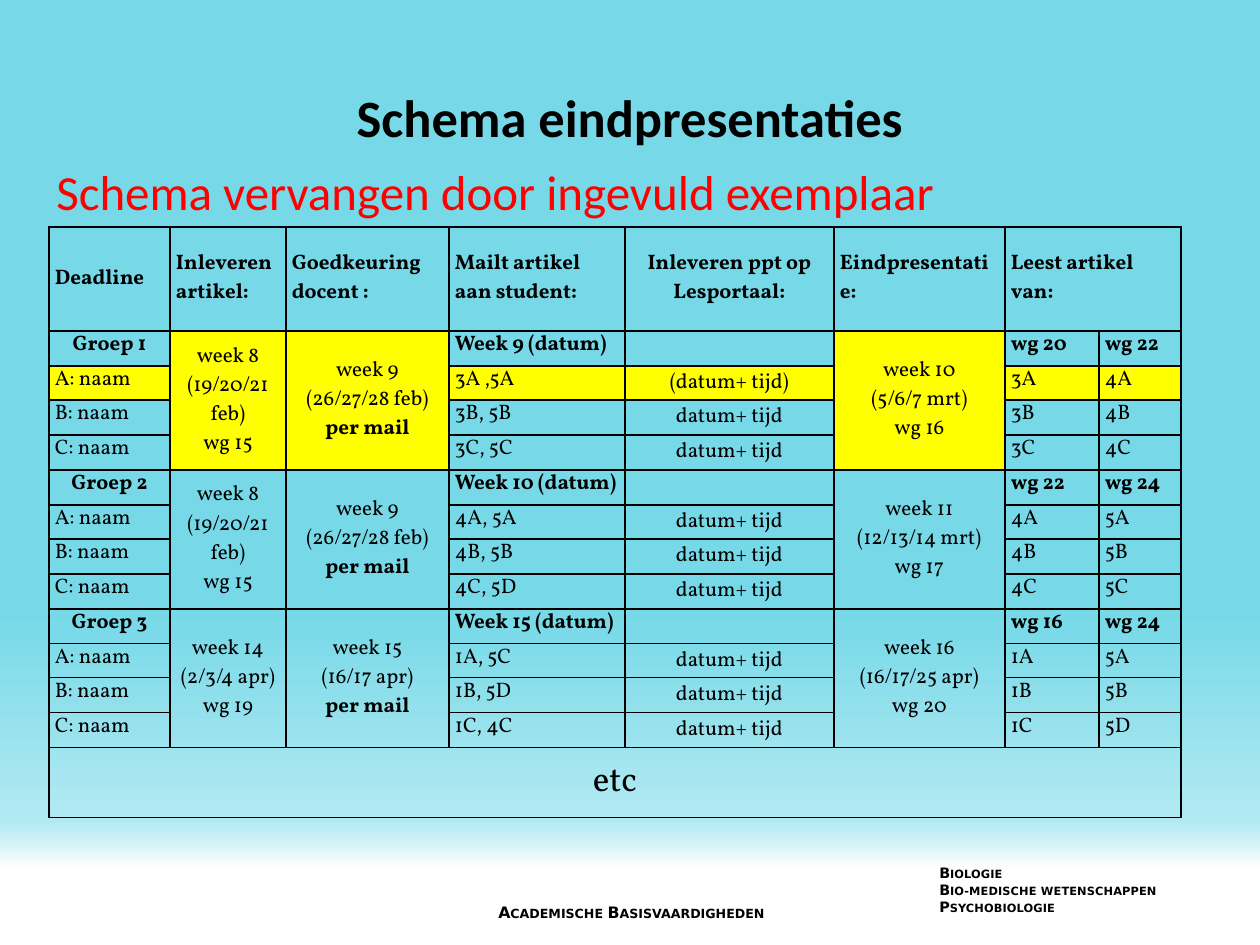
from copy import deepcopy
from dataclasses import dataclass

from lxml import etree
from pptx import Presentation
from pptx import util as u
from pptx.dml.color import RGBColor
from pptx.enum import text
from pptx.oxml.ns import qn


@dataclass(frozen=True)
class Theme:
    ink: str = "000000"
    red: str = "FF0000"
    mark: str = "FFFF00"
    sky: tuple = ((0.65, "77D9E8"), (0.87, "B3EAF2"), (0.92, "FFFFFF"))
    head: str = "Calibri"
    body: str = "Vollkorn"
    foot: str = "DejaVu Sans"
    title: float = 30
    note: float = 28
    cell: float = 12
    etc: float = 20
    course: float = 9
    studies: float = 8.2


T = Theme()
PX = 914400 / 126
LEFT, CENTER = text.PP_ALIGN.LEFT, text.PP_ALIGN.CENTER


def px(*lengths):
    return [u.Emu(round(n * PX)) for n in lengths]


def write(tf, lines, name, size, color=T.ink, bold=False, align=LEFT, caps=False):
    tf.word_wrap = True
    for i, line in enumerate(lines):
        p = tf.paragraphs[0] if i == 0 else tf.add_paragraph()
        p.alignment = align
        p.font.name = name
        p.font.size = u.Pt(size)
        p.font.bold = bold or line == "per mail"
        p.font.color.rgb = RGBColor.from_string(color)
        if line:
            r = p.add_run()
            r.text = line
            if caps:
                r.font.bold = bold
                r._r.rPr.set("cap", "small")
        else:
            etree.SubElement(p._p, qn("a:endParaRPr"), sz=str(size * 100))


prs = Presentation()
prs.slide_width, prs.slide_height = px(1260, 945)
s = prs.slides.add_slide(prs.slide_layouts[5])

fill = s.background.fill
fill.gradient()
fill.gradient_angle = 270
stops = s.element.xpath(".//a:gsLst")[0]
stops.append(deepcopy(stops[-1]))
for stop, (position, color) in zip(fill.gradient_stops, T.sky):
    stop.position = position
    stop.color.rgb = RGBColor.from_string(color)

title = s.shapes.title
title.left, title.top, title.width, title.height = px(63, 38, 1134, 157)
title.text_frame.vertical_anchor = text.MSO_ANCHOR.MIDDLE
write(title.text_frame, ["Schema eindpresentaties"], T.head, T.title, bold=True, align=CENTER)

course = s.shapes.add_textbox(*px(425, 897, 413, 32))
write(course.text_frame, ["Academische Basisvaardigheden"], T.foot, T.course,
      bold=True, align=CENTER, caps=True)
studies = s.shapes.add_textbox(*px(927, 858, 328, 66))
write(studies.text_frame, ["Biologie", "Bio-medische wetenschappen", "Psychobiologie"],
      T.foot, T.studies, bold=True, caps=True)

header = ["Deadline", "Inleveren\nartikel:", "Goedkeuring\ndocent :", "Mailt artikel aan student:",
          "Inleveren ppt op Lesportaal:", "Eindpresentatie:", "Leest artikel van:", ""]
groups = [
    (["week 8", "(19/20/21 feb)", "wg 15"], ["week 9", "(26/27/28 feb)", "per mail"],
     ["week 10", "(5/6/7 mrt)", "wg 16"],
     [("Week 9 (datum)", "wg 20", "wg 22"), ("3A ,5A", "3A", "4A"),
      ("3B, 5B", "3B", "4B"), ("3C, 5C", "3C", "4C")]),
    (["week 8", "(19/20/21 feb)", "wg 15"], ["week 9", "(26/27/28 feb)", "per mail"],
     ["week 11", "(12/13/14 mrt)", "wg 17"],
     [("Week 10 (datum)", "wg 22", "wg 24"), ("4A, 5A", "4A", "5A"),
      ("4B, 5B", "4B", "5B"), ("4C, 5D", "4C", "5C")]),
    (["week 14", "(2/3/4 apr)", "wg 19"], ["week 15", "(16/17 apr)", "per mail"],
     ["week 16", "(16/17/25 apr)", "wg 20"],
     [("Week 15 (datum)", "wg 16", "wg 24"), ("1A, 5C", "1A", "5A"),
      ("1B, 5D", "1B", "5B"), ("1C, 4C", "1C", "5D")]),
]
rows = [[cell.split("\n") for cell in header]]
for g, (hand_in, approval, talk, members) in enumerate(groups, 1):
    for i, (mail, first, second) in enumerate(members):
        name = f"{'ABC'[i - 1]}: naam" if i else f"Groep {g}"
        slot = ("(datum+ tijd)" if g == i == 1 else "datum+ tijd") if i else ""
        rows.append([[name], hand_in, approval, [mail], [slot], talk, [first], [second]])
rows.append([["etc"]] + [[""]] * 7)

widths = px(121, 116, 163, 176, 209, 171, 94, 82)
heights = px(104, *[35, 34, 35, 35] * len(groups), 70)
last, spans = len(rows) - 1, (1, 2, 5)
frame = s.shapes.add_table(len(rows), len(widths), *px(49, 227), sum(widths), sum(heights))
table = frame.table
table.first_row = table.horz_banding = False
for col, width in zip(table.columns, widths):
    col.width = width
for row, height in zip(table.rows, heights):
    row.height = height

table.cell(0, 6).merge(table.cell(0, 7))
table.cell(last, 0).merge(table.cell(last, 7))
for top in range(1, last, 4):
    for c in spans:
        table.cell(top, c).merge(table.cell(top + 3, c))

for r, row in enumerate(rows):
    for c, lines in enumerate(row):
        cell = table.cell(r, c)
        cell.margin_left = cell.margin_right = px(6)[0]
        cell.margin_top = cell.margin_bottom = 0
        if cell.is_spanned:
            continue
        group_head = r % 4 == 1 and r < last
        centered = c == 4 or r == last or (r > 0 and c in spans) or (group_head and c == 0)
        bold = r == 0 or (group_head and c not in spans)
        if r in (0, last) or c == 4 or c in spans:
            cell.vertical_anchor = text.MSO_ANCHOR.MIDDLE
        write(cell.text_frame, lines, T.body, T.etc if r == last else T.cell,
              bold=bold, align=CENTER if centered else LEFT)

        tcPr = cell._tc.get_or_add_tcPr()
        bottom = r + (cell.span_height if cell.is_merge_origin else 1)
        right = c + (cell.span_width if cell.is_merge_origin else 1)
        edges = {"L": c == 0, "R": right == len(widths), "T": r in (0, 1, 5), "B": bottom in (1, 5)}
        for side, thick in edges.items():
            ln = etree.SubElement(tcPr, qn(f"a:ln{side}"), w=str(u.Pt(1.5 if thick else 1)))
            solid = etree.SubElement(ln, qn("a:solidFill"))
            etree.SubElement(solid, qn("a:srgbClr"), val=T.ink)
        if r == 2 or (r == 1 and c in spans):
            cell.fill.solid()
            cell.fill.fore_color.rgb = RGBColor.from_string(T.mark)
        else:
            cell.fill.background()

note = s.shapes.add_textbox(*px(44, 155, 1134, 79))
write(note.text_frame, ["Schema vervangen door ingevuld exemplaar"], T.head, T.note, T.red)

prs.save("out.pptx")
